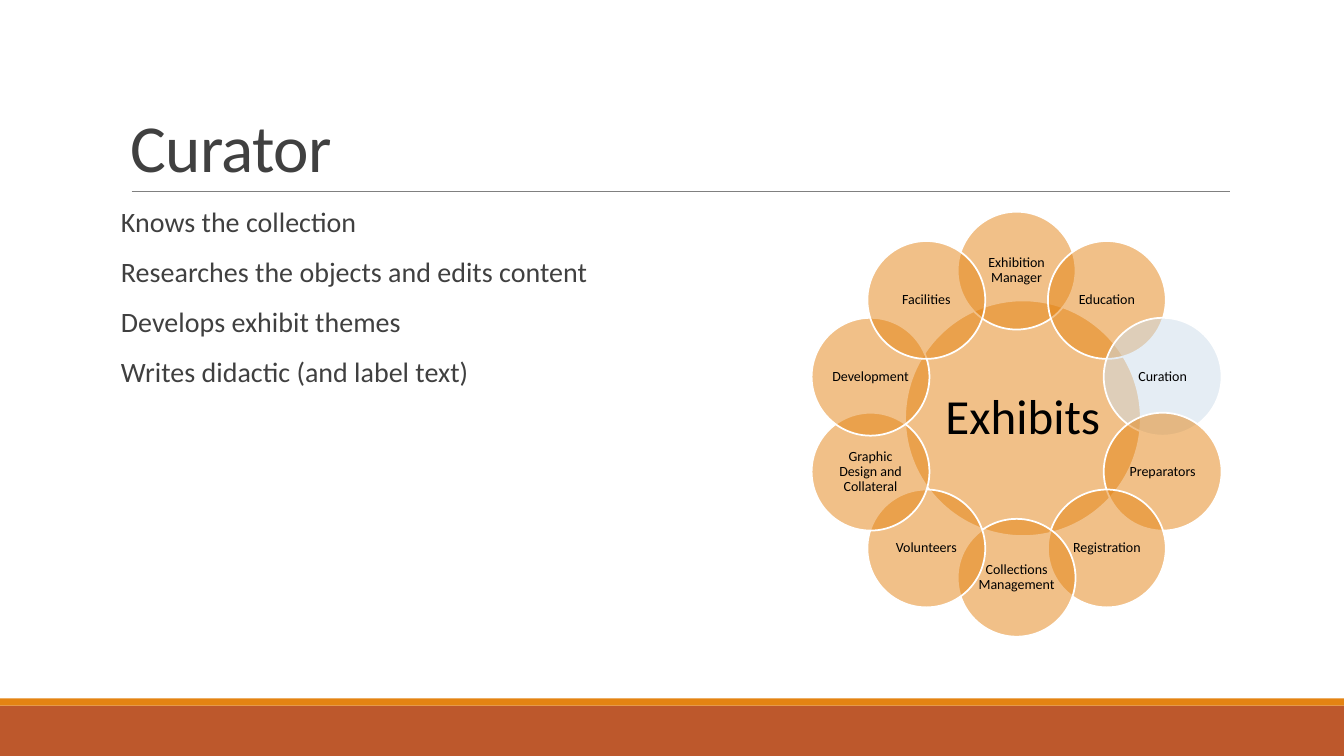
from math import cos, pi, sin

from lxml import etree
from pptx import Presentation
from pptx.dml.color import RGBColor
from pptx.enum.shapes import MSO_CONNECTOR, MSO_SHAPE
from pptx.enum.text import MSO_ANCHOR, PP_ALIGN
from pptx.oxml.ns import qn
from pptx.util import Cm, Pt

OVAL, RECTANGLE = MSO_SHAPE.OVAL, MSO_SHAPE.RECTANGLE
STRAIGHT = MSO_CONNECTOR.STRAIGHT
MIDDLE, BOTTOM = MSO_ANCHOR.MIDDLE, MSO_ANCHOR.BOTTOM
CENTER = PP_ALIGN.CENTER

RUST = RGBColor(0xBD, 0x58, 0x2C)
ORANGE = RGBColor(0xE4, 0x83, 0x12)
PALE_BLUE = RGBColor(0xCC, 0xDD, 0xEA)
GREY = RGBColor(0x80, 0x80, 0x80)
DARK = RGBColor(0x40, 0x40, 0x40)
BLACK = RGBColor(0, 0, 0)
WHITE = RGBColor(0xFF, 0xFF, 0xFF)

DUTIES = [
    "Knows the collection",
    "Researches the objects and edits content",
    "Develops exhibit themes",
    "Writes didactic (and label text)",
]
DEPARTMENTS = [
    "Exhibition Manager", "Education", "Curation", "Preparators",
    "Registration", "Collections Management", "Volunteers",
    "Graphic Design and Collateral", "Development", "Facilities",
]
RING_X, RING_Y, RING_RADIUS = 25.62, 10.69, 3.87


def add_line_of_text(paragraph, text, size, color, spacing=0.9):
    paragraph.line_spacing = spacing
    run = paragraph.add_run()
    run.text = text
    run.font.name = "Calibri"
    run.font.size = Pt(size)
    run.font.color.rgb = color
    return run


def add_circle(x, y, diameter, color, label, size, inset):
    """Draw a half-transparent labelled circle centred on x, y (in cm)."""
    circle = slide.shapes.add_shape(
        OVAL, Cm(x - diameter / 2), Cm(y - diameter / 2), Cm(diameter), Cm(diameter))
    circle.shadow.inherit = False
    circle.fill.solid()
    circle.fill.fore_color.rgb = color
    srgb = circle.fill._xPr.find(qn("a:solidFill")).find(qn("a:srgbClr"))
    etree.SubElement(srgb, qn("a:alpha")).set("val", "50000")
    circle.line.color.rgb = WHITE
    circle.line.width = Pt(1.25)
    frame = circle.text_frame
    frame.word_wrap = True
    frame.vertical_anchor = MIDDLE
    frame.margin_left = frame.margin_right = Cm(inset)
    frame.margin_top = frame.margin_bottom = Cm(inset)
    frame.paragraphs[0].alignment = CENTER
    add_line_of_text(frame.paragraphs[0], label, size, BLACK)


presentation = Presentation()
presentation.slide_width = Cm(33.87)
presentation.slide_height = Cm(19.05)
slide = presentation.slides.add_slide(presentation.slide_layouts[6])

# Footer bands and title rule
for top, height, color in [(17.78, 1.27, RUST), (17.6, 0.18, ORANGE)]:
    band = slide.shapes.add_shape(RECTANGLE, 0, Cm(top), Cm(33.87), Cm(height))
    band.shadow.inherit = False
    band.fill.solid()
    band.fill.fore_color.rgb = color
    band.line.fill.background()

rule = slide.shapes.add_connector(STRAIGHT, Cm(3.32), Cm(4.82), Cm(31), Cm(4.82))
rule.line.color.rgb = GREY
rule.line.width = Pt(0.5)
etree.SubElement(rule._element.spPr, qn("a:effectLst"))

# Title
title = slide.shapes.add_textbox(Cm(3.05), Cm(0.79), Cm(27.94), Cm(4.04)).text_frame
title.word_wrap = True
title.vertical_anchor = BOTTOM
title_run = add_line_of_text(title.paragraphs[0], "Curator", 48, DARK, 0.85)
title_run.font._element.set("spc", "-50")

# Duties
duties = slide.shapes.add_textbox(Cm(3.05), Cm(5.13), Cm(27.94), Cm(11.18)).text_frame
duties.word_wrap = True
duties.margin_left = duties.margin_right = 0
for index, duty in enumerate(DUTIES):
    paragraph = duties.add_paragraph() if index else duties.paragraphs[0]
    if index:
        paragraph.space_before = Pt(12)
    paragraph.space_after = Pt(2)
    add_line_of_text(paragraph, duty, 20, DARK)

# Exhibits hub and its ring of departments, clockwise from the top
add_circle(25.78, 10.54, 5.94, ORANGE, "Exhibits", 35, 0.12)
for index, department in enumerate(DEPARTMENTS):
    angle = 2 * pi * index / len(DEPARTMENTS)
    add_circle(
        RING_X + RING_RADIUS * sin(angle), RING_Y - RING_RADIUS * cos(angle), 2.97,
        PALE_BLUE if department == "Curation" else ORANGE, department, 10, 0.03)

presentation.save("out.pptx")
